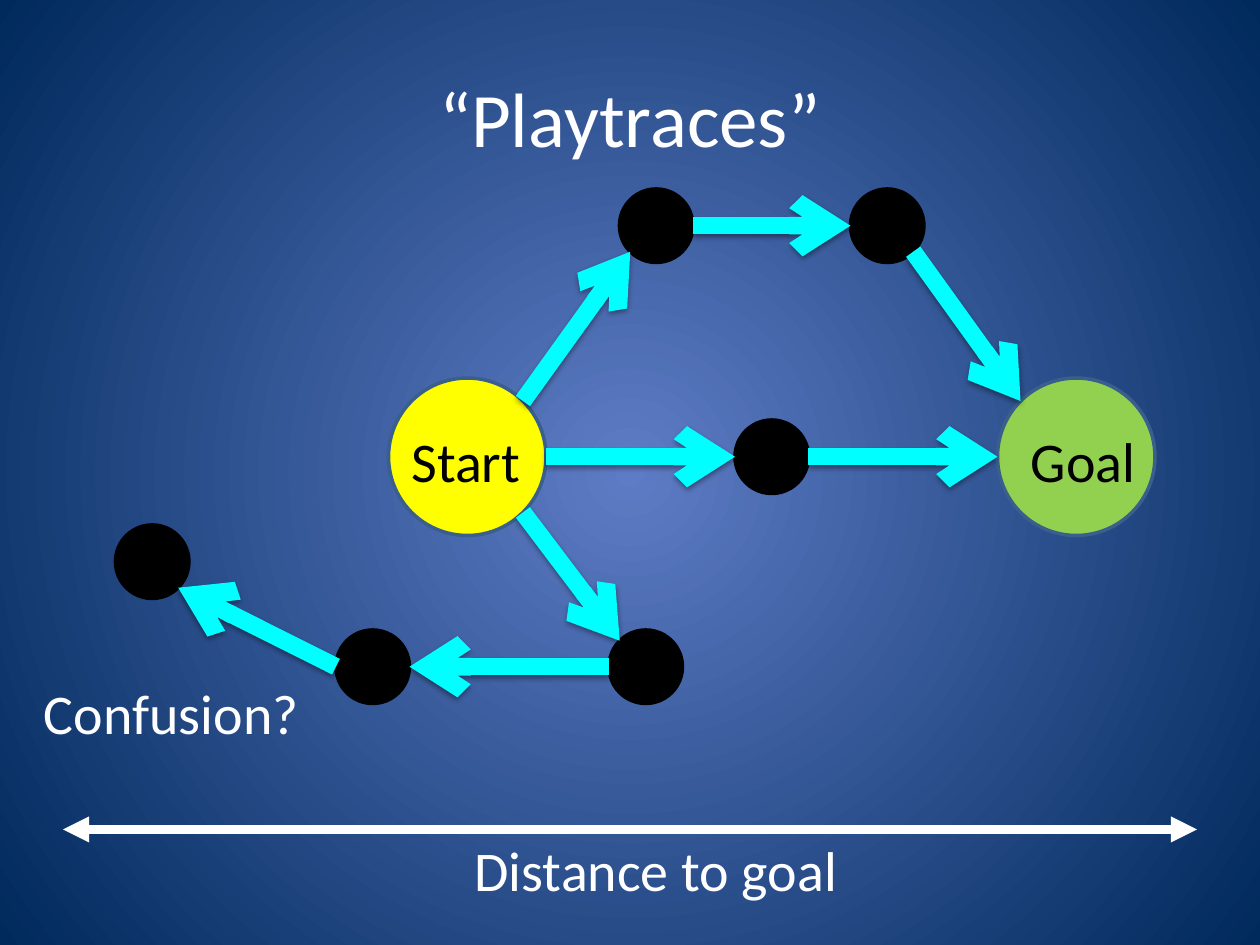
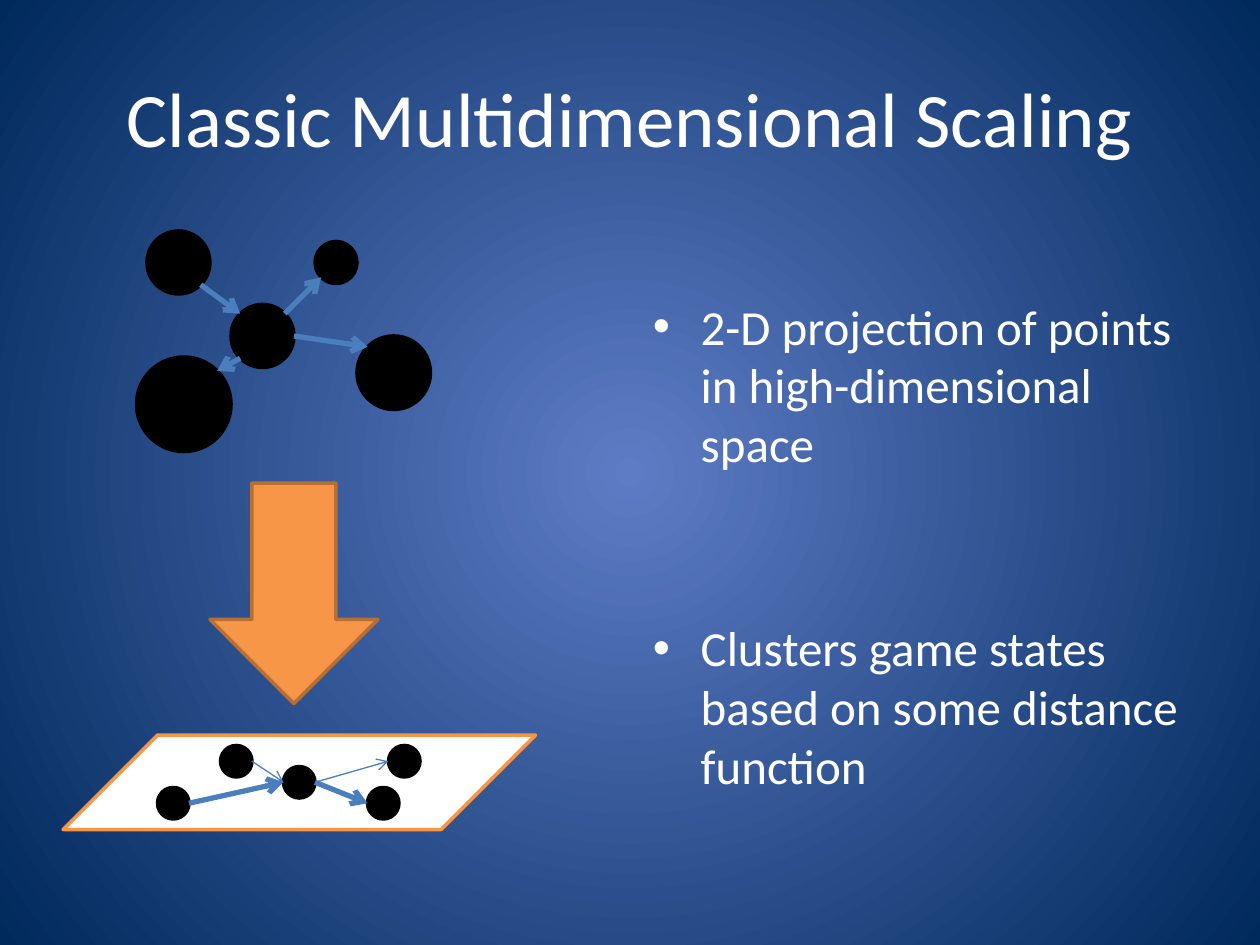
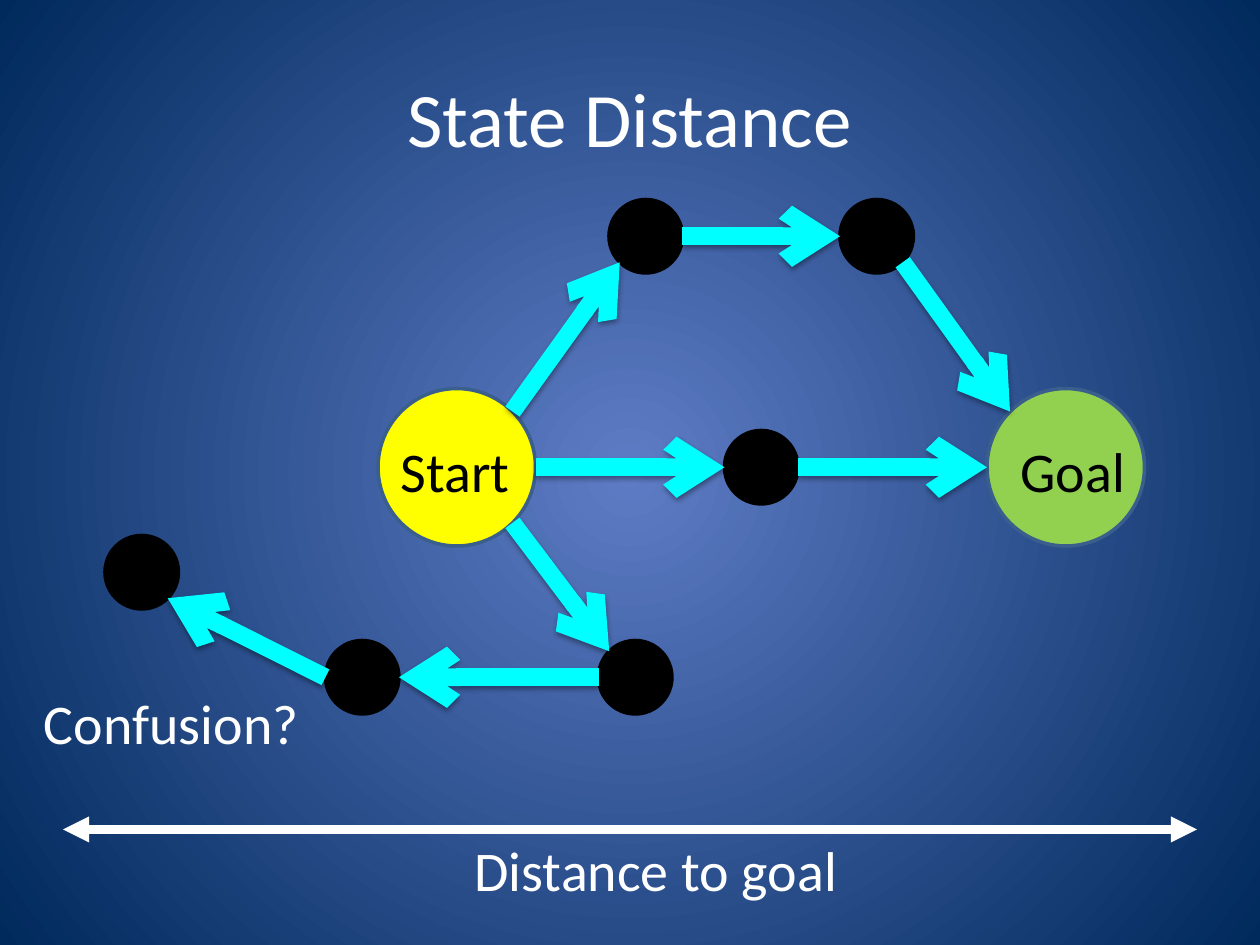
from collections import namedtuple
from math import cos, radians, sin

from lxml.etree import SubElement
from pptx import Presentation
from pptx.dml.color import RGBColor
from pptx.enum.shapes import MSO_CONNECTOR as Connector, MSO_SHAPE as Preset
from pptx.enum.text import MSO_ANCHOR as Anchor, MSO_AUTO_SIZE as AutoSize, PP_ALIGN as Align
from pptx.oxml.ns import qn
from pptx.util import Emu, Inches, Pt

COLUMNS, ROWS = 120, 90
WHITE, BLACK = "FFFFFF", "000000"
YELLOW, GREEN, NAVY = "FFFF00", "92D050", "3A5F8C"
CYAN, BLUE = "00FFFF", "4B7EBC"
ORANGE, BROWN = "F79646", "B76F34"
GLOW, MIDNIGHT = "5E7CC5", "00295C"
ANGLES = {"e": 0, "se": 45, "s": 90, "sw": 135, "w": 180, "nw": 225, "n": 270, "ne": 315}


def rgb(value):
    return RGBColor.from_string(value)


class Node(namedtuple("Node", "column row size")):
    def edge(self, side):
        angle, radius = radians(ANGLES[side]), self.size / 2
        return (self.column + radius * (1 + cos(angle)),
                self.row + radius * (1 + sin(angle)))


class Deck:
    font = "Calibri"

    def __init__(self):
        self.presentation = Presentation()
        self.presentation.slide_width = Inches(10)
        self.presentation.slide_height = Inches(7.5)
        self.slide = None

    def grid(self, *lengths):
        steps = (self.presentation.slide_width / COLUMNS, self.presentation.slide_height / ROWS)
        return [Emu(round(length * steps[i % 2])) for i, length in enumerate(lengths)]

    def new_slide(self, title):
        self.slide = self.presentation.slides.add_slide(self.presentation.slide_layouts[6])
        fill = self.slide.background.fill
        fill.gradient()
        for stop, color in zip(fill.gradient_stops, (GLOW, MIDNIGHT)):
            stop.color.rgb = rgb(color)
        gradient = self.slide.element.find(".//" + qn("a:gradFill"))
        gradient.remove(gradient.find(qn("a:lin")))
        circle = SubElement(gradient, qn("a:path"), {"path": "circle"})
        SubElement(circle, qn("a:fillToRect"), l="50000", t="50000", r="50000", b="50000")
        heading = self.text_frame(6, 3.6, 108, 15)
        heading.vertical_anchor = Anchor.MIDDLE
        self.set_text(heading.paragraphs[0], title, 44).alignment = Align.CENTER

    def text_frame(self, *box):
        frame = self.slide.shapes.add_textbox(*self.grid(*box)).text_frame
        frame.word_wrap = True
        return frame

    def set_text(self, paragraph, text, size, color=WHITE):
        paragraph.text = text
        paragraph.font.name = self.font
        paragraph.font.size = Pt(size)
        paragraph.font.color.rgb = rgb(color)
        return paragraph

    def label(self, text, column, row, width, color=WHITE):
        frame = self.text_frame(column, row, width, 7.7)
        frame.word_wrap = False
        frame.auto_size = AutoSize.SHAPE_TO_FIT_TEXT
        self.set_text(frame.paragraphs[0], text, 32, color)

    def bullets(self, texts, box, top_inset, gap):
        frame = self.text_frame(*box)
        frame.margin_top = self.grid(0, top_inset)[1]
        for i, text in enumerate(texts):
            paragraph = frame.add_paragraph() if i else frame.paragraphs[0]
            indent = Inches(0.38)
            properties = paragraph._p.get_or_add_pPr()
            properties.set("marL", str(indent))
            properties.set("indent", str(-indent))
            SubElement(properties, qn("a:buFont"), typeface="Arial")
            SubElement(properties, qn("a:buChar"), char="•")
            self.set_text(paragraph, text, 28)
            if i:
                paragraph.space_before = Pt(gap)

    def shape(self, preset, box, fill, outline):
        shape = self.slide.shapes.add_shape(preset, *self.grid(*box))
        shape.shadow.inherit = False
        shape.fill.solid()
        shape.fill.fore_color.rgb = rgb(fill)
        shape.line.color.rgb = rgb(outline)
        shape.line.width = Pt(2)

    def node(self, node, fill=BLACK, outline=BLACK):
        self.shape(Preset.OVAL, (*node, node.size), fill, outline)

    def arrow(self, start, end, color, width, head=None, tail="arrow", shadow=False):
        line = self.slide.shapes.add_connector(Connector.STRAIGHT, *self.grid(*start, *end))
        line.line.color.rgb = rgb(color)
        line.line.width = Pt(width)
        outline = line.line._get_or_add_ln()
        for tag, kind in (("a:headEnd", head), ("a:tailEnd", tail)):
            if kind:
                SubElement(outline, qn(tag), type=kind)
        effects = SubElement(line._element.spPr, qn("a:effectLst"))
        if shadow:
            cast = SubElement(effects, qn("a:outerShdw"), blurRad="40000", dist="20000",
                              dir="5400000", rotWithShape="0")
            tint = SubElement(cast, qn("a:srgbClr"), val=BLACK)
            SubElement(tint, qn("a:alpha"), val="38000")

    def network(self, nodes, links, color, shadow=False):
        for source, leaving, target, entering, width in links:
            self.arrow(nodes[source].edge(leaving), nodes[target].edge(entering),
                       color, width, shadow=shadow)

    def playtraces(self, title, column, row):
        self.new_slide(title)
        offsets = {
            "start": (0, 0, 15), "goal": (58, 0, 15),
            "climb": (22, -18, 7), "ridge": (44, -18, 7), "middle": (33, 4, 7),
            "detour": (21, 24, 7), "retreat": (-5, 24, 7), "lost": (-26, 14, 7),
        }
        nodes = {name: Node(column + x, row + y, size) for name, (x, y, size) in offsets.items()}
        fills = {"start": (YELLOW, NAVY), "goal": (GREEN, NAVY)}
        for name, node in nodes.items():
            self.node(node, *fills.get(name, ()))
        moves = [
            ("start", "ne", "climb", "sw"), ("climb", "e", "ridge", "w"),
            ("ridge", "se", "goal", "nw"), ("start", "e", "middle", "w"),
            ("middle", "e", "goal", "w"), ("start", "se", "detour", "nw"),
            ("detour", "w", "retreat", "e"), ("retreat", "w", "lost", "se"),
        ]
        self.network(nodes, [(*move, 10) for move in moves], CYAN, shadow=True)
        self.label("Goal", column + 60, row + 4, 12.5, BLACK)
        self.label("Start", column + 1, row + 4, 13, BLACK)
        self.label("Confusion?", 3, row + 28, 27)
        self.arrow((6, 79), (114, 79), WHITE, 5, head="triangle", tail="triangle")
        self.label("Distance to goal", 44, 79, 37.3)

    def scaling(self):
        self.new_slide("Classic Multidimensional Scaling")
        self.bullets(["2-D projection of points in high-dimensional space",
                      "Clusters game states based on some distance function"],
                     (61, 21, 53, 59.4), top_inset=7.2, gap=83)
        space = {
            "origin": Node(14, 22, 6), "large": Node(13, 34, 9), "hub": Node(22, 29, 6),
            "small": Node(30, 23, 4), "far": Node(34, 32, 7),
        }
        plane = {
            "origin": Node(21, 71, 3), "large": Node(15, 75, 3), "hub": Node(27, 73, 3),
            "far": Node(35, 75, 3), "small": Node(37, 71, 3),
        }
        self.shape(Preset.DOWN_ARROW, (20, 46, 16, 21), ORANGE, BROWN)
        self.shape(Preset.FLOWCHART_DATA, (6, 70, 45, 9), WHITE, ORANGE)
        for node in (*space.values(), *plane.values()):
            self.node(node)
        self.network(space, [
            ("origin", "se", "hub", "nw", 3), ("hub", "sw", "large", "ne", 3),
            ("hub", "ne", "small", "sw", 3), ("hub", "e", "far", "nw", 3),
        ], BLUE)
        self.network(plane, [
            ("large", "e", "hub", "w", 3), ("hub", "e", "far", "w", 3),
            ("hub", "e", "small", "w", 0.75), ("origin", "e", "hub", "w", 0.75),
        ], BLUE)


def main():
    deck = Deck()
    deck.playtraces("“Playtraces”", 37, 36)
    deck.scaling()
    deck.playtraces("State Distance", 36, 37)
    deck.presentation.save("out.pptx")


if __name__ == "__main__":
    main()
